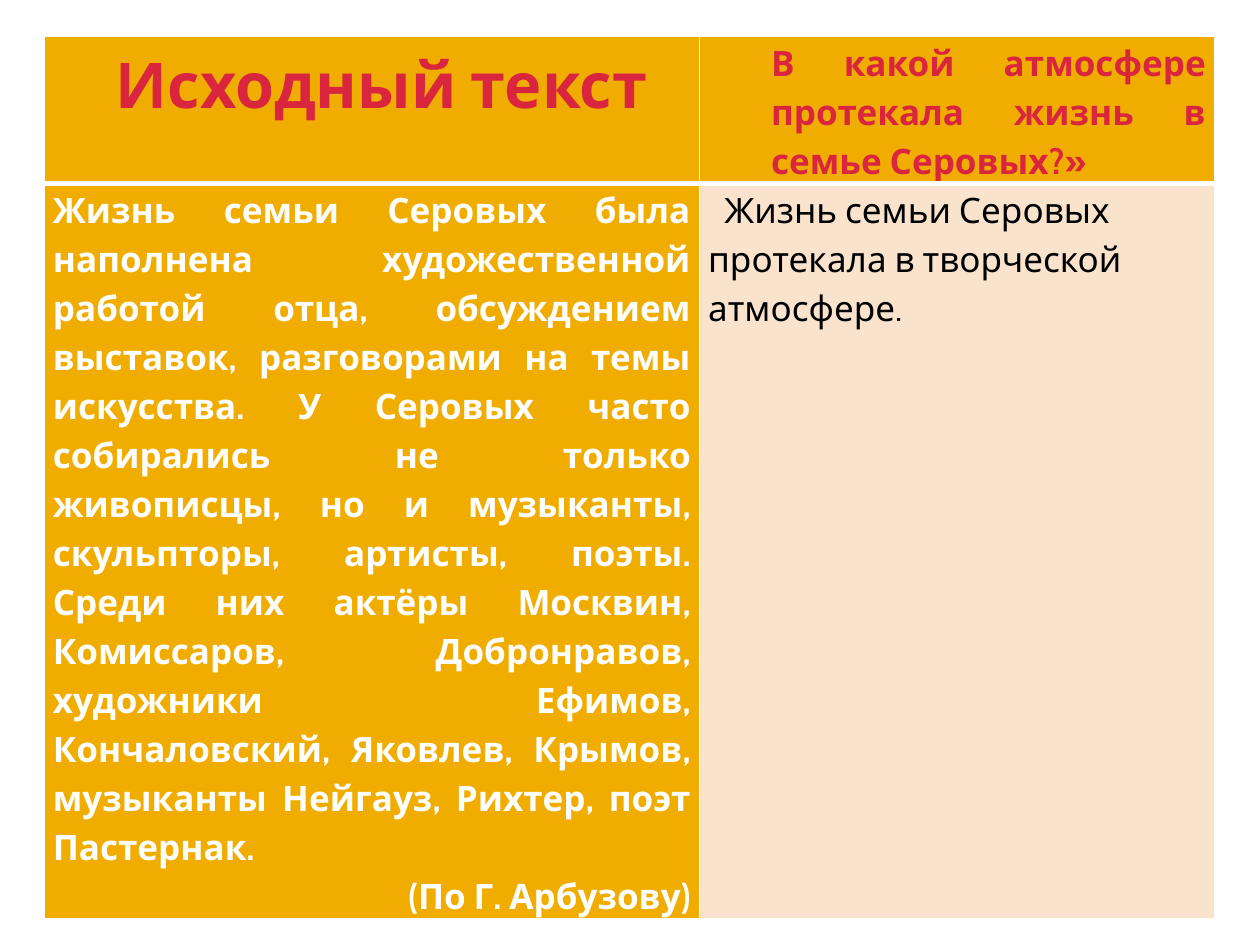
from dataclasses import dataclass

from lxml import etree
from pptx import Presentation
from pptx.dml.color import RGBColor
from pptx.enum.text import PP_ALIGN
from pptx.oxml.ns import qn
from pptx.util import Inches, Pt

LEFT, RIGHT, JUSTIFY = PP_ALIGN.LEFT, PP_ALIGN.RIGHT, PP_ALIGN.JUSTIFY


@dataclass(frozen=True)
class Theme:
    font: str = "Cabin"
    title_size: int = 36
    body_size: int = 20
    line_spacing: float = 1.15
    gold: str = "F0AD00"
    cream: str = "F9E3CC"
    red: str = "D9253E"
    white: str = "FFFFFF"
    black: str = "000000"
    thin: float = 1
    thick: float = 3


THEME = Theme()

SOURCE_TEXT = (
    "Жизнь семьи Серовых была наполнена художественной работой отца, "
    "обсуждением выставок, разговорами на темы искусства. У Серовых часто "
    "собирались не только живописцы, но и музыканты, скульпторы, артисты, "
    "поэты. Среди них актёры Москвин, Комиссаров, Добронравов, художники "
    "Ефимов, Кончаловский, Яковлев, Крымов, музыканты Нейгауз, Рихтер, поэт "
    "Пастернак."
)

# Each paragraph: text, alignment, left margin, first-line indent (inches)
CELLS = [
    [
        dict(fill=THEME.gold, color=THEME.red, size=THEME.title_size, bold=True,
             paragraphs=[("Исходный текст", JUSTIFY, 0.5, 0)]),
        dict(fill=THEME.gold, color=THEME.red, size=THEME.body_size, bold=True,
             paragraphs=[("В какой атмосфере протекала жизнь в семье Серовых?»",
                          JUSTIFY, 0.5, 0)]),
    ],
    [
        dict(fill=THEME.gold, color=THEME.white, size=THEME.body_size, bold=True,
             paragraphs=[(SOURCE_TEXT, JUSTIFY, 0, 0),
                         ("(По Г. Арбузову)", RIGHT, 0, 0)]),
        dict(fill=THEME.cream, color=THEME.black, size=THEME.body_size, bold=False,
             paragraphs=[("Жизнь семьи Серовых протекала в творческой атмосфере.",
                          LEFT, 0, 0.13)]),
    ],
]

TABLE_LEFT, TABLE_TOP = 0.35, 0.29
COLUMN_WIDTHS = (5.2, 4.09)
ROW_HEIGHTS = (1.14, 5.79)
CELL_MARGIN = 0.07


def add_borders(cell, widths):
    """Draw white borders; widths maps an edge letter (L, R, T, B) to points."""
    properties = cell._tc.get_or_add_tcPr()
    for position, (edge, width) in enumerate(widths.items()):
        line = etree.Element(qn(f"a:ln{edge}"), w=str(Pt(width)))
        solid = etree.SubElement(line, qn("a:solidFill"))
        etree.SubElement(solid, qn("a:srgbClr"), val=THEME.white)
        properties.insert(position, line)


def write_paragraph(para, content, style):
    text, alignment, margin, indent = content
    para.alignment = alignment
    para.line_spacing = THEME.line_spacing
    properties = para._p.get_or_add_pPr()
    properties.set("marL", str(Inches(margin)))
    properties.set("indent", str(Inches(indent)))
    span = para.add_run()
    span.text = text
    span.font.name = THEME.font
    span.font.size = Pt(style["size"])
    span.font.bold = style["bold"]
    span.font.color.rgb = RGBColor.from_string(style["color"])


def fill_cell(cell, content, bottom_width):
    cell.fill.solid()
    cell.fill.fore_color.rgb = RGBColor.from_string(content["fill"])
    cell.margin_left = cell.margin_right = Inches(CELL_MARGIN)
    cell.margin_top = cell.margin_bottom = 0
    add_borders(cell, {"L": THEME.thin, "R": THEME.thin,
                       "T": THEME.thin, "B": bottom_width})
    frame = cell.text_frame
    for index, paragraph in enumerate(content["paragraphs"]):
        para = frame.add_paragraph() if index else frame.paragraphs[0]
        write_paragraph(para, paragraph, content)


def main():
    deck = Presentation()
    deck.slide_width, deck.slide_height = Inches(10), Inches(7.5)
    page = deck.slides.add_slide(deck.slide_layouts[6])

    table = page.shapes.add_table(
        len(ROW_HEIGHTS), len(COLUMN_WIDTHS), Inches(TABLE_LEFT), Inches(TABLE_TOP),
        Inches(sum(COLUMN_WIDTHS)), Inches(sum(ROW_HEIGHTS))).table
    for column, width in zip(table.columns, COLUMN_WIDTHS):
        column.width = Inches(width)
    for row, height in zip(table.rows, ROW_HEIGHTS):
        row.height = Inches(height)

    for row_index, row in enumerate(CELLS):
        bottom_width = THEME.thin if row_index else THEME.thick
        for column_index, content in enumerate(row):
            fill_cell(table.cell(row_index, column_index), content, bottom_width)

    deck.save("out.pptx")


if __name__ == "__main__":
    main()
